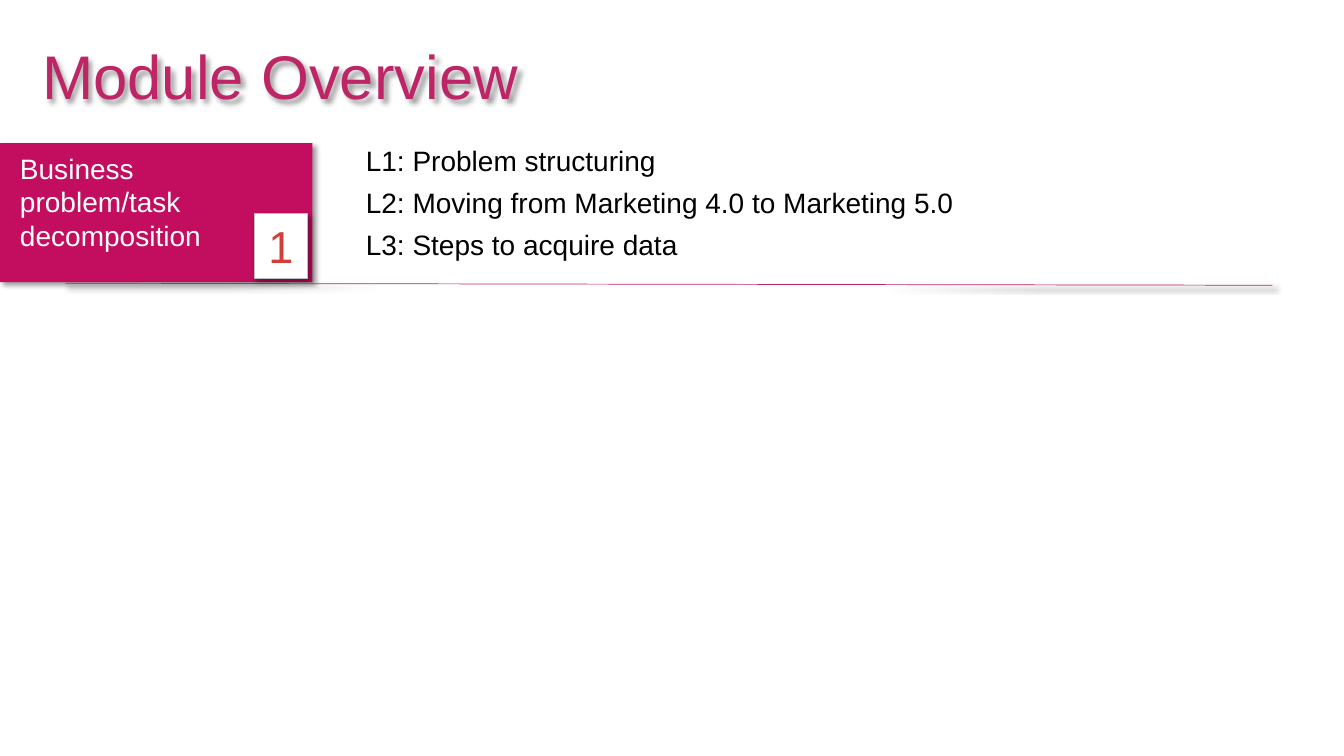
from lxml import etree
from pptx import Presentation
from pptx.dml.color import RGBColor
from pptx.enum import shapes, text
from pptx.oxml import ns
from pptx.util import Inches, Pt

PINK = "BE2566"
WHITE = "FFFFFF"


def color(value):
    return RGBColor.from_string(value)


def add_shadow(shape):
    """Soft grey shadow falling to the lower right."""
    properties = shape._element.spPr
    effects = etree.SubElement(properties, ns.qn("a:effectLst"))
    shadow = etree.SubElement(effects, ns.qn("a:outerShdw"), blurRad=str(Pt(4)),
                              dist=str(Pt(3)), dir="2700000", algn="tl", rotWithShape="0")
    black = etree.SubElement(shadow, ns.qn("a:srgbClr"), val="000000")
    etree.SubElement(black, ns.qn("a:alpha"), val="40000")


def write(shape, lines, size, tint, align=text.PP_ALIGN.LEFT, after=0, wrap=True):
    frame = shape.text_frame
    frame.word_wrap = wrap
    frame.text = "\n".join(lines)
    for para in frame.paragraphs:
        para.alignment = align
        para.space_after = Pt(after)
        para.font.name = "Arial"
        para.font.size = Pt(size)
        para.font.color.rgb = color(tint)


def add_text(page, left, top, width, height):
    return page.shapes.add_textbox(Inches(left), Inches(top), Inches(width), Inches(height))


def add_panel(page, left, top, width, height, fill, outline=None):
    panel = page.shapes.add_shape(shapes.MSO_SHAPE.RECTANGLE, Inches(left), Inches(top),
                                  Inches(width), Inches(height))
    panel.fill.solid()
    panel.fill.fore_color.rgb = color(fill)
    if outline:
        panel.line.color.rgb = color(outline)
        panel.line.width = Pt(0.75)
    else:
        panel.line.fill.background()
    add_shadow(panel)
    return panel


def add_title(page, left, top, width, height, title):
    box = add_text(page, left, top, width, height)
    box.fill.background()
    write(box, [title], 44, PINK)
    add_shadow(box)


def add_module(page, left, top, width, height, number, name, lessons):
    # Module name on its coloured panel
    add_panel(page, left, top, width, height, "C30E60")
    label = add_text(page, left + 0.1, top + 0.03, 2.4, 1.11)
    write(label, name, 20, WHITE, wrap=False)

    # Number badge in the lower right corner
    badge = add_panel(page, left + width - 0.58, top + height - 0.68, 0.53, 0.64,
                      WHITE, "BFBFBF")
    write(badge, [number], 32, "D23E38", align=text.PP_ALIGN.CENTER)

    # Rule below the module
    bottom = top + height
    rule = page.shapes.add_connector(shapes.MSO_CONNECTOR.STRAIGHT,
                                     Inches(left + 0.65), Inches(bottom + 0.01),
                                     Inches(left + 12.62), Inches(bottom + 0.03))
    rule.line.color.rgb = color(PINK)
    rule.line.width = Pt(0.5)
    add_shadow(rule)

    # Lessons beside the panel
    box = add_text(page, left + width + 0.43, top - 0.05, 8.66, 1.28)
    write(box, lessons, 20, "000000", after=6)


def main():
    deck = Presentation()
    deck.slide_width, deck.slide_height = Inches(13.33), Inches(7.5)
    page = deck.slides.add_slide(deck.slide_layouts[6])
    add_title(page, 0.32, 0.33, 8.87, 0.84, "Module Overview")
    add_module(page, 0, 1.42, 3.1, 1.38, "1",
               ["Business", "problem/task", "decomposition"],
               ["L1: Problem structuring",
                "L2: Moving from Marketing 4.0 to Marketing 5.0",
                "L3: Steps to acquire data"])
    deck.save("out.pptx")


if __name__ == "__main__":
    main()
